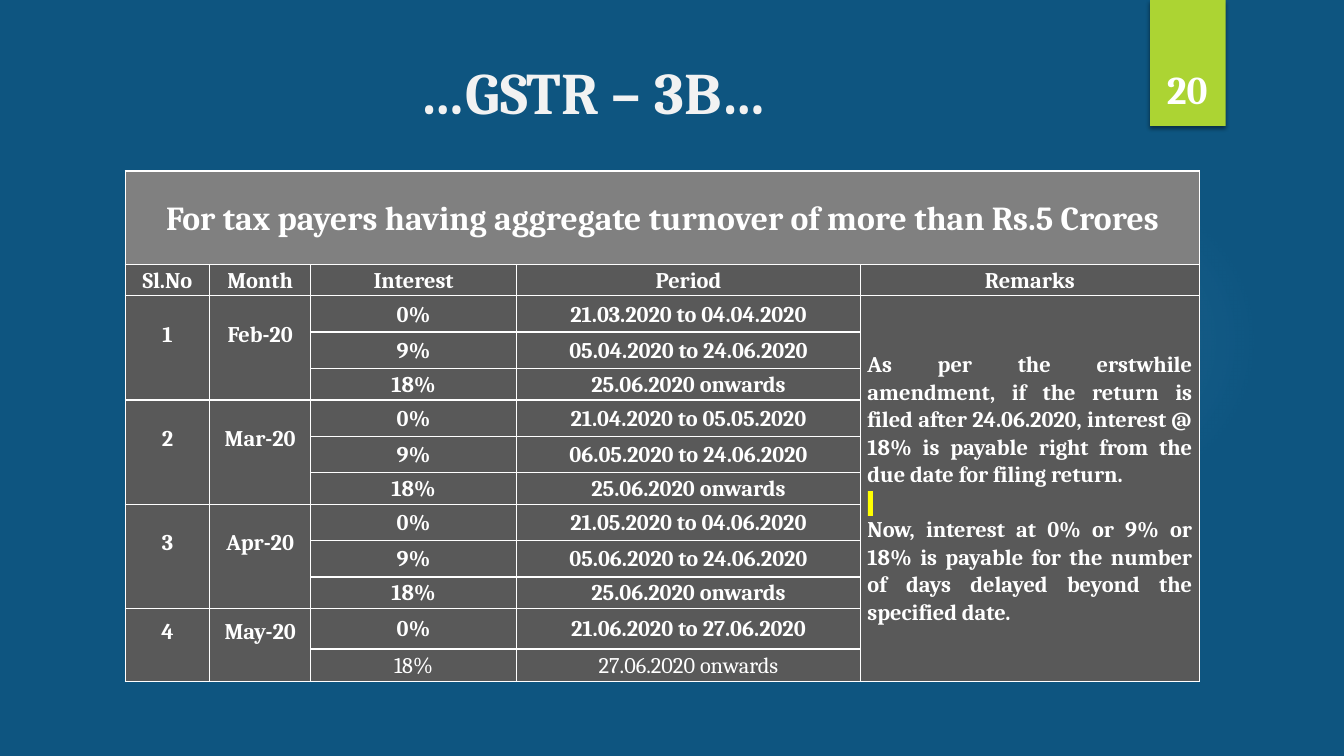
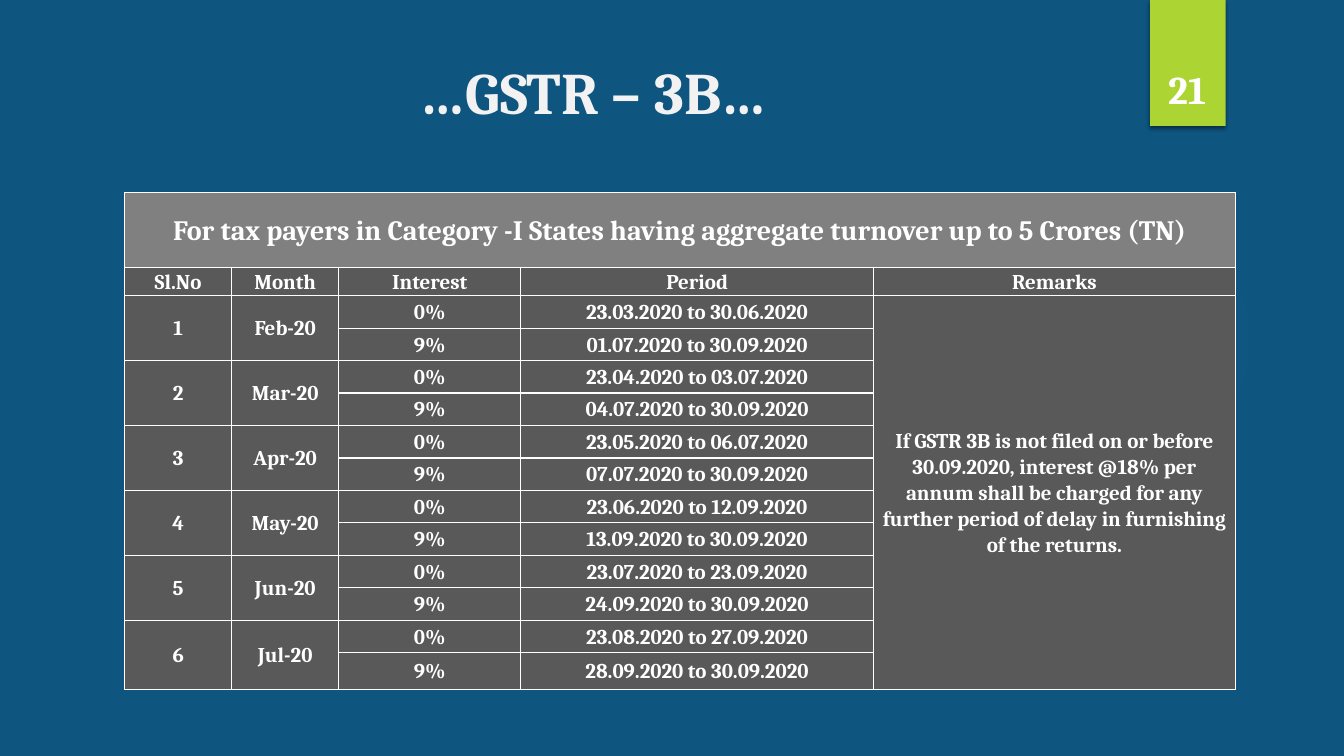
from pptx import Presentation
from pptx.dml.color import RGBColor
from pptx.enum.shapes import MSO_SHAPE as Shape
from pptx.enum.text import MSO_ANCHOR as Anchor, PP_ALIGN as Align
from pptx.oxml import parse_xml
from pptx.oxml.ns import nsdecls, qn
from pptx.util import Pt

BLUE = RGBColor(0x0E, 0x55, 0x80)
SKY = RGBColor(0x7A, 0xC4, 0xF0)
LIME = RGBColor(0xAC, 0xD4, 0x33)
YELLOW = RGBColor(0xFF, 0xFF, 0x00)
WHITE = RGBColor(0xFF, 0xFF, 0xFF)
OFF_WHITE = RGBColor(0xF2, 0xF2, 0xF2)
GREY = RGBColor(0x80, 0x80, 0x80)
DARK_GREY = RGBColor(0x59, 0x59, 0x59)
BLACK = RGBColor(0, 0, 0)

HEADINGS = ("Sl.No", "Month", "Interest", "Period", "Remarks")

LARGE_PAYERS = (
    ("Feb-20", (("0%", "21.03.2020 to 04.04.2020"),
                ("9%", "05.04.2020 to 24.06.2020"),
                ("18%", "25.06.2020 onwards"))),
    ("Mar-20", (("0%", "21.04.2020 to 05.05.2020"),
                ("9%", "06.05.2020 to 24.06.2020"),
                ("18%", "25.06.2020 onwards"))),
    ("Apr-20", (("0%", "21.05.2020 to 04.06.2020"),
                ("9%", "05.06.2020 to 24.06.2020"),
                ("18%", "25.06.2020 onwards"))),
    ("May-20", (("0%", "21.06.2020 to 27.06.2020"),
                ("18%", "27.06.2020 onwards"))),
)
LARGE_REMARKS = (
    "As per the erstwhile amendment, if the return is filed after 24.06.2020, "
    "interest @ 18% is payable right from the due date for filing return.",
    "Now, interest at 0% or 9% or 18% is payable for the number of days "
    "delayed beyond the specified date.",
)

SMALL_PAYERS = (
    ("Feb-20", (("0%", "23.03.2020 to 30.06.2020"), ("9%", "01.07.2020 to 30.09.2020"))),
    ("Mar-20", (("0%", "23.04.2020 to 03.07.2020"), ("9%", "04.07.2020 to 30.09.2020"))),
    ("Apr-20", (("0%", "23.05.2020 to 06.07.2020"), ("9%", "07.07.2020 to 30.09.2020"))),
    ("May-20", (("0%", "23.06.2020 to 12.09.2020"), ("9%", "13.09.2020 to 30.09.2020"))),
    ("Jun-20", (("0%", "23.07.2020 to 23.09.2020"), ("9%", "24.09.2020 to 30.09.2020"))),
    ("Jul-20", (("0%", "23.08.2020 to 27.09.2020"), ("9%", "28.09.2020 to 30.09.2020"))),
)
SMALL_REMARKS = (
    "If GSTR 3B is not filed on or before 30.09.2020, interest @18% per annum "
    "shall be charged for any further period of delay in furnishing of the returns.",
)


class SlideBuilder:
    font = "Cambria"

    def __init__(self):
        self.deck = Presentation()
        self.deck.slide_width, self.deck.slide_height = Pt(960), Pt(540)
        fill = self.deck.slide_master.background.fill
        fill.solid()
        fill.fore_color.rgb = BLUE
        self.page = None

    def start(self, title, number):
        self.page = self.deck.slides.add_slide(self.deck.slide_layouts[5])
        self.glow()
        self.badge(number)
        self.title(title)

    def shape(self, kind, left, top, width, height, color=None):
        shape = self.page.shapes.add_shape(kind, Pt(left), Pt(top), Pt(width), Pt(height))
        shape.shadow.inherit = False
        shape.line.fill.background()
        if color is not None:
            shape.fill.solid()
            shape.fill.fore_color.rgb = color
        return shape

    def glow(self):
        """Add the faint round light behind the content."""
        stops = "".join(
            f'<a:gs pos="{place * 1000}"><a:srgbClr val="{SKY}">'
            f'<a:alpha val="{alpha * 1000}"/></a:srgbClr></a:gs>'
            for place, alpha in ((0, 7), (36, 6), (69, 0)))
        gradient = parse_xml(
            f'<a:gradFill {nsdecls("a")}><a:gsLst>{stops}</a:gsLst><a:path path="circle">'
            '<a:fillToRect l="50000" t="50000" r="50000" b="50000"/></a:path></a:gradFill>')
        light = self.shape(Shape.OVAL, 677.5, 131.8, 222, 222)
        light._element.spPr.find(qn("a:prstGeom")).addnext(gradient)

    def badge(self, number):
        tab = self.shape(Shape.RECTANGLE, 821.5, 0, 54, 90, LIME)
        tab._element.spPr.find(qn("a:effectLst")).append(parse_xml(
            f'<a:outerShdw {nsdecls("a")} blurRad="{Pt(3)}" dist="{Pt(2)}" dir="5400000" '
            f'rotWithShape="0"><a:srgbClr val="{BLACK}"><a:alpha val="45000"/></a:srgbClr>'
            '</a:outerShdw>'))
        box = self.page.shapes.add_textbox(Pt(815), Pt(23), Pt(66), Pt(60.5))
        box.text_frame.word_wrap = True
        box.text_frame.vertical_anchor = Anchor.BOTTOM
        self.add_text(box.text_frame.paragraphs[0], str(number), 28)

    def title(self, text):
        box = self.page.shapes.title
        box.left, box.top, box.width, box.height = Pt(30), Pt(36), Pt(788), Pt(110)
        box.text_frame.vertical_anchor = Anchor.TOP
        self.add_text(box.text_frame.paragraphs[0], text, 42, color=OFF_WHITE)

    def add_text(self, para, text, size, align=Align.CENTER, color=WHITE, bold=True):
        para.alignment = align
        span = para.add_run()
        span.text = text
        span.font.name = self.font
        span.font.size = Pt(size)
        span.font.bold = bold
        span.font.color.rgb = color

    def cell(self, cell, texts, size, align=Align.CENTER, bold=True, gap=0, lift=0):
        """Fill a cell; gap parts its paragraphs and lift raises its text."""
        cell.margin_bottom = Pt(lift)
        for index, text in enumerate(texts):
            frame = cell.text_frame
            para = frame.add_paragraph() if index else frame.paragraphs[0]
            para.line_spacing = 1.07
            if index:
                para.space_before = Pt(gap)
            self.add_text(para, text, size, align, bold=bold)

    def grid(self, left, top, widths, heights):
        """Add an empty bordered table with a lighter first row."""
        table = self.page.shapes.add_table(
            len(heights), len(widths), Pt(left), Pt(top),
            Pt(sum(widths)), Pt(sum(heights))).table
        table.first_row = table.horz_banding = False
        for column, width in zip(table.columns, widths):
            column.width = Pt(width)
        for index, (row, height) in enumerate(zip(table.rows, heights)):
            row.height = Pt(height)
            for cell in row.cells:
                cell.margin_left = cell.margin_right = Pt(5)
                cell.margin_top = cell.margin_bottom = 0
                cell.vertical_anchor = Anchor.MIDDLE
                for side in "LRTB":
                    cell._tc.get_or_add_tcPr().append(parse_xml(
                        f'<a:ln{side} {nsdecls("a")} w="{Pt(1)}"><a:solidFill>'
                        f'<a:srgbClr val="{WHITE}"/></a:solidFill></a:ln{side}>'))
                cell.fill.solid()
                cell.fill.fore_color.rgb = DARK_GREY if index else GREY
        return table

    def interest_table(self, place, widths, heights, heading, heading_size, months,
                       remarks, size, remarks_align=Align.CENTER, gap=0, lift=0,
                       plain_last=False):
        table = self.grid(*place, widths, heights)
        last = len(heights) - 1
        table.cell(0, 0).merge(table.cell(0, 4))
        self.cell(table.cell(0, 0), [heading], heading_size)
        for column, text in enumerate(HEADINGS):
            self.cell(table.cell(1, column), [text], size)
        table.cell(2, 4).merge(table.cell(last, 4))
        self.cell(table.cell(2, 4), remarks, size, remarks_align, gap=gap)
        row = 2
        for number, (month, rates) in enumerate(months, 1):
            for column, text in enumerate((str(number), month)):
                table.cell(row, column).merge(table.cell(row + len(rates) - 1, column))
                self.cell(table.cell(row, column), [text], size, lift=lift)
            for rate in rates:
                bold = not (plain_last and row == last)
                for column, text in enumerate(rate, 2):
                    self.cell(table.cell(row, column), [text], size, bold=bold)
                row += 1


def main():
    builder = SlideBuilder()

    builder.start("…GSTR – 3B…", 20)
    builder.interest_table(
        (89.4, 122.2), (60.4, 72.1, 147.1, 245.7, 242.1),
        [67, 22] + [26, 26, 22.5] * 3 + [29, 23],
        "For tax payers having aggregate turnover of more than Rs.5 Crores", 24,
        LARGE_PAYERS, LARGE_REMARKS, 16, Align.JUSTIFY, gap=19.6, lift=19.6,
        plain_last=True)
    builder.shape(Shape.RECTANGLE, 620, 350.8, 3.6, 17.8, YELLOW)

    builder.start("…GSTR – 3B…", 21)
    builder.interest_table(
        (89, 137.5), (76.5, 76.5, 130, 252, 258.5),
        [53.5, 20.2] + [23.2] * 11 + [26.5],
        "For tax payers in Category -I States having aggregate turnover up to 5 Crores (TN)",
        20, SMALL_PAYERS, SMALL_REMARKS, 15)

    builder.deck.save("out.pptx")


if __name__ == "__main__":
    main()
